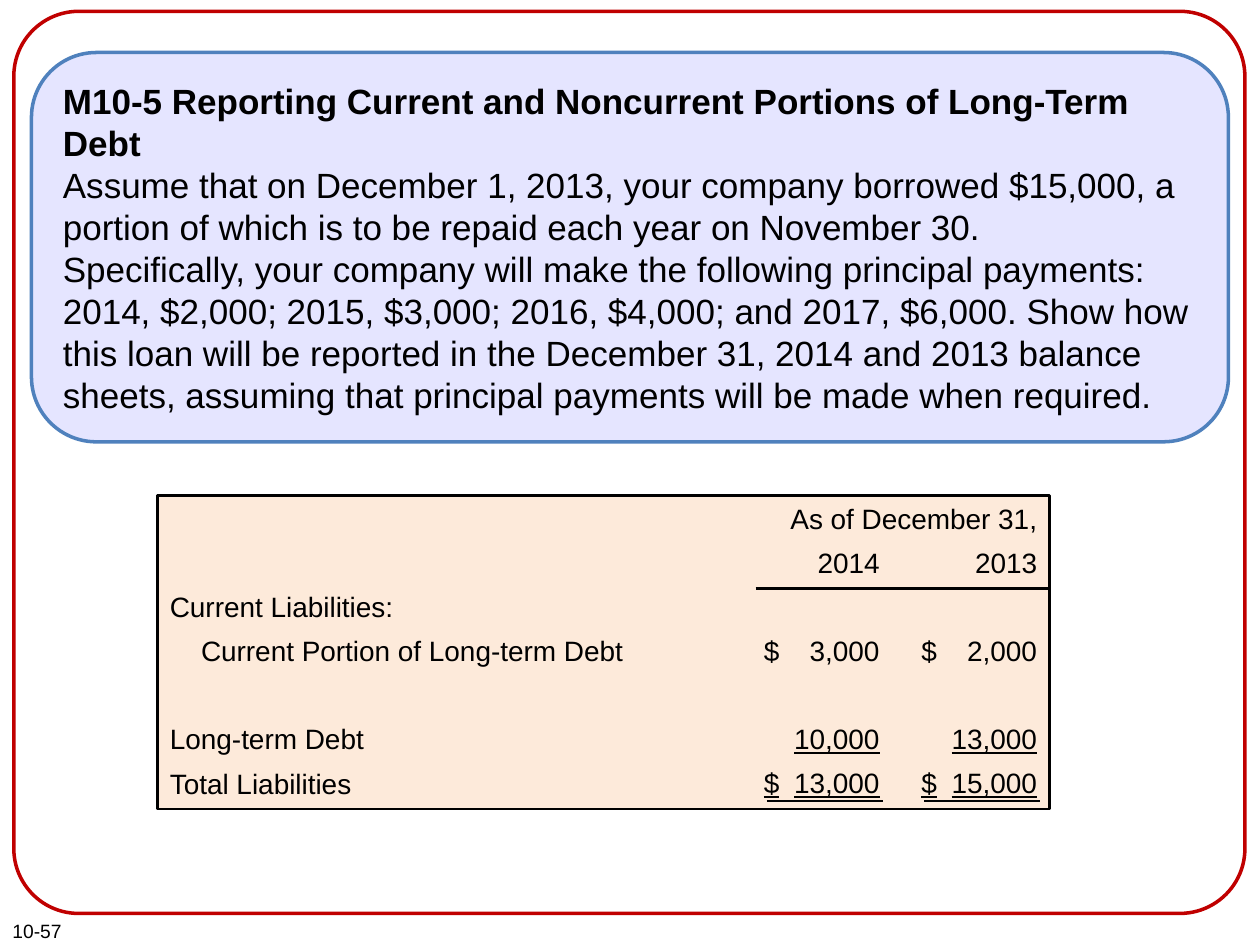
from lxml import etree
from pptx import Presentation
from pptx.dml.color import RGBColor
from pptx.enum import shapes as kinds, text as txt
from pptx.oxml.ns import qn
from pptx.util import Pt

BLACK = "000000"
GAP, ROW = 6, 25.2          # space before a row, and row pitch
INSET_X, INSET_Y = 7.2, 3.6


def color(hex_string):
    return RGBColor.from_string(hex_string)


def set_font(paragraph, size, bold=False, underline=None):
    font = paragraph.font
    font.name, font.size, font.bold = "Arial", Pt(size), bold
    font.underline = underline
    font.color.rgb = color(BLACK)


def add_panel(slide, kind, box, line, width, fill=None, corner=None):
    panel = slide.shapes.add_shape(kind, *map(Pt, box))
    panel.shadow.inherit = False
    panel.line.color.rgb, panel.line.width = color(line), Pt(width)
    if fill:
        panel.fill.solid()
        panel.fill.fore_color.rgb = color(fill)
    else:
        panel.fill.background()
    if corner:
        panel.adjustments[0] = corner
    panel.text_frame.word_wrap = True
    return panel


def add_rule(slide, x1, x2, y):
    rule = slide.shapes.add_connector(
        kinds.MSO_CONNECTOR.STRAIGHT, Pt(x1), Pt(y), Pt(x2), Pt(y))
    rule.line.color.rgb, rule.line.width = color(BLACK), Pt(1.25)
    etree.SubElement(rule._element.spPr, qn("a:effectLst"))


def add_rows(frame, rows):
    """Write (row number, text, alignment, underline); skipped rows become space."""
    frame.vertical_anchor = txt.MSO_ANCHOR.TOP
    previous = None
    for number, content, align, underline in rows:
        first = previous is None
        row = frame.paragraphs[0] if first else frame.add_paragraph()
        row.text, row.alignment = content, align
        row.space_before = Pt(0 if first else GAP + (number - previous - 1) * ROW)
        set_font(row, 16, underline=underline)
        previous = number


def frame_and_number(slide, box):
    add_panel(slide, kinds.MSO_SHAPE.ROUNDED_RECTANGLE, box, "C00000", 2, corner=0.072)
    number = slide.shapes.add_textbox(Pt(0), Pt(box[1] + box[3]), Pt(102), Pt(21))
    number.text_frame.word_wrap = True
    page = number.text_frame.paragraphs[0]
    page.text = "10-57"
    set_font(page, 11)


def exercise(slide, box, heading, question):
    panel = add_panel(slide, kinds.MSO_SHAPE.ROUNDED_RECTANGLE, box, "4F81BD", 2, "E5E5FF")
    frame = panel.text_frame
    frame.vertical_anchor = txt.MSO_ANCHOR.MIDDLE
    for paragraph, content, bold in ((frame.paragraphs[0], heading, True),
                                     (frame.add_paragraph(), question, False)):
        paragraph.text, paragraph.alignment = content, txt.PP_ALIGN.LEFT
        set_font(paragraph, 20, bold)


def year_column(slide, box, year, current, long_term, total):
    left, top, width, height = box
    dollar_inset = 22.5
    column = slide.shapes.add_textbox(*map(Pt, box))
    frame = column.text_frame
    frame.word_wrap = True
    frame.margin_left = Pt(dollar_inset)
    left_align = txt.PP_ALIGN.LEFT
    add_rows(frame, [
        (1, year, txt.PP_ALIGN.RIGHT, None),
        (3, f"$\t{current}", left_align, None),
        (5, f"\t{long_term}", left_align, True),
        (6, f"$\t{total}", left_align, True),
    ])
    # Amounts end on a right tab at the column's edge
    for amount in frame.paragraphs[1:]:
        tabs = etree.SubElement(amount._p.get_or_add_pPr(), qn("a:tabLst"))
        amount._p.pPr.insert_element_before(tabs, "a:defRPr", "a:extLst")
        stop = Pt(width - dollar_inset - INSET_X)
        etree.SubElement(tabs, qn("a:tab"), pos=str(stop), algn="r")
    # Second underline below the total
    add_rule(slide, left + 24.2, left + 90.5, top + height - 4.6)


def balance_sheet(slide, box):
    left, top, width, height = box
    panel = add_panel(slide, kinds.MSO_SHAPE.RECTANGLE, box, BLACK, 1.5, "FDEADA")
    add_rows(panel.text_frame, [
        (0, "As of December 31,", txt.PP_ALIGN.RIGHT, None),
        (2, "Current Liabilities:", txt.PP_ALIGN.LEFT, None),
        (3, "Current Portion of Long-term Debt", txt.PP_ALIGN.LEFT, None),
        (5, "Long-term Debt", txt.PP_ALIGN.LEFT, None),
        (6, "Total Liabilities", txt.PP_ALIGN.LEFT, None),
    ])
    indented = panel.text_frame.paragraphs[2]._p.get_or_add_pPr()
    indented.set("marL", str(Pt(17.8)))
    indented.set("indent", "0")

    # Year columns, the last flush with the panel's right edge
    column_width, step = 95.8, 90
    right = left + width
    years = [("2014", "3,000", "10,000", "13,000"),
             ("2013", "2,000", "13,000", "15,000")]
    for back, figures in zip((1, 0), years):
        column = (right - column_width - back * step, top + ROW,
                  column_width, height - ROW)
        year_column(slide, column, *figures)
    add_rule(slide, right - 168, right, top + 53.3)


def main():
    deck = Presentation()
    deck.slide_width, deck.slide_height = Pt(720), Pt(540)
    slide = deck.slides.add_slide(deck.slide_layouts[6])
    frame_and_number(slide, (7.9, 6.5, 703.5, 515.5))
    balance_sheet(slide, (90, 283, 509.8, 179.3))
    exercise(
        slide, (18, 30, 684, 222.5),
        "M10-5 Reporting Current and Noncurrent Portions of Long-Term Debt",
        "Assume that on December 1, 2013, your company borrowed $15,000, a portion "
        "of which is to be repaid each year on November 30. \n"
        "Specifically, your company will make the following principal payments: "
        "2014, $2,000; 2015, $3,000; 2016, $4,000; and 2017, $6,000. Show how this "
        "loan will be reported in the December 31, 2014 and 2013 balance sheets, "
        "assuming that principal payments will be made when required.")
    deck.save("out.pptx")


if __name__ == "__main__":
    main()
